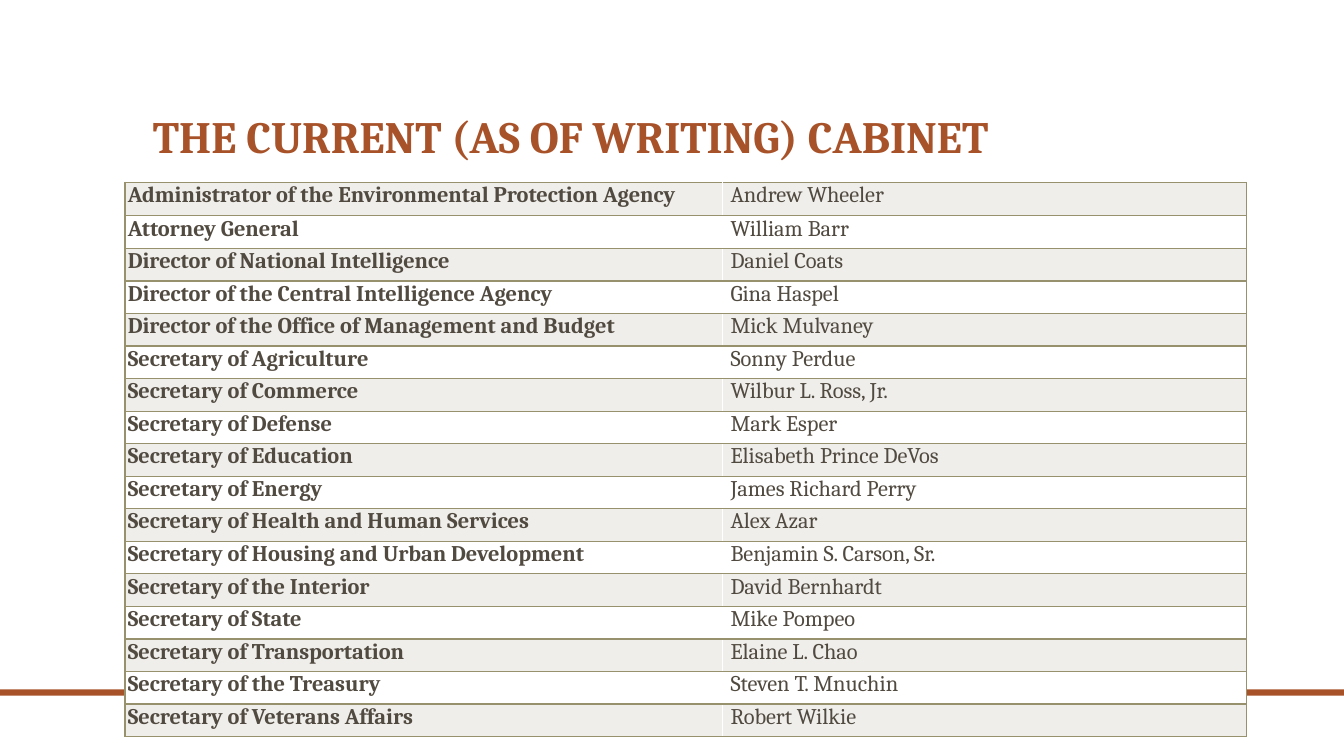
"""Builds a slide that lists the members of the Cabinet in a table."""
from lxml import etree
from pptx import Presentation
from pptx.dml.color import RGBColor
from pptx.enum.shapes import MSO_SHAPE
from pptx.enum.text import MSO_ANCHOR, MSO_AUTO_SIZE, PP_ALIGN
from pptx.oxml.ns import qn
from pptx.util import Cm, Pt

RECT = MSO_SHAPE.RECTANGLE
TOP, BOTTOM = MSO_ANCHOR.TOP, MSO_ANCHOR.BOTTOM
LEFT = PP_ALIGN.LEFT
NO_FIT = MSO_AUTO_SIZE.NONE
FACE = "Cambria"
RUST, BROWN, OLIVE = "A85229", "514A40", "98916E"
BANDS = ["EFEEEB", "FFFFFF"]
SIDES = [("lnL", "lnT", "lnB"), ("lnR", "lnT", "lnB")]
INSETS = [0.07, 0.2]

CABINET = [
    ("Administrator of the Environmental Protection Agency", "Andrew Wheeler"),
    ("Attorney General", "William Barr"),
    ("Director of National Intelligence", "Daniel Coats"),
    ("Director of the Central Intelligence Agency", "Gina Haspel"),
    ("Director of the Office of Management and Budget", "Mick Mulvaney"),
    ("Secretary of Agriculture", "Sonny Perdue"),
    ("Secretary of Commerce", "Wilbur L. Ross, Jr."),
    ("Secretary of Defense", "Mark Esper"),
    ("Secretary of Education", "Elisabeth Prince DeVos"),
    ("Secretary of Energy", "James Richard Perry"),
    ("Secretary of Health and Human Services", "Alex Azar"),
    ("Secretary of Housing and Urban Development", "Benjamin S. Carson, Sr."),
    ("Secretary of the Interior", "David Bernhardt"),
    ("Secretary of State", "Mike Pompeo"),
    ("Secretary of Transportation", "Elaine L. Chao"),
    ("Secretary of the Treasury", "Steven T. Mnuchin"),
    ("Secretary of Veterans Affairs", "Robert Wilkie"),
]


def paint(fill, color):
    fill.solid()
    fill.fore_color.rgb = RGBColor.from_string(color)


def style(para, size, color, bold):
    para.alignment = LEFT
    para.font.name = FACE
    para.font.size = Pt(size)
    para.font.bold = bold
    para.font.color.rgb = RGBColor.from_string(color)


deck = Presentation()
deck.slide_width, deck.slide_height = Cm(33.87), Cm(19.05)
slide = deck.slides.add_slide(deck.slide_layouts[5])

bar = slide.shapes.add_shape(RECT, 0, Cm(17.37), deck.slide_width, Cm(0.16))
bar.shadow.inherit = False
paint(bar.fill, RUST)
bar.line.fill.background()

title = slide.shapes.title
title.left, title.top = Cm(3.6), Cm(1.07)
title.width, title.height = Cm(26.67), Cm(3.18)
frame = title.text_frame
frame.text = "THE CURRENT (AS OF WRITING) CABINET"
frame.auto_size = NO_FIT
frame.vertical_anchor = BOTTOM
frame.paragraphs[0].line_spacing = 0.9
style(frame.paragraphs[0], 32, RUST, True)

table = slide.shapes.add_table(
    len(CABINET), 2, Cm(3.15), Cm(4.6), Cm(28.27), Cm(13.96)).table
table.first_row = table.horz_banding = False
table.columns[0].width, table.columns[1].width = Cm(15.06), Cm(13.21)

for row, member in enumerate(CABINET):
    table.rows[row].height = Cm(0.82 if row else 0.84)
    for col, text in enumerate(member):
        cell = table.cell(row, col)
        cell.text = text
        cell.margin_left, cell.margin_right = Cm(INSETS[col]), Cm(0.07)
        cell.margin_top = cell.margin_bottom = 0
        cell.vertical_anchor = TOP
        style(cell.text_frame.paragraphs[0], 16, BROWN, col == 0)
        paint(cell.fill, BANDS[row % 2])
        props = cell._tc.get_or_add_tcPr()
        for spot, side in enumerate(SIDES[col]):
            edge = etree.Element(qn("a:" + side), w=str(Pt(1)))
            solid = etree.SubElement(edge, qn("a:solidFill"))
            etree.SubElement(solid, qn("a:srgbClr"), val=OLIVE)
            props.insert(spot, edge)

deck.save("out.pptx")
